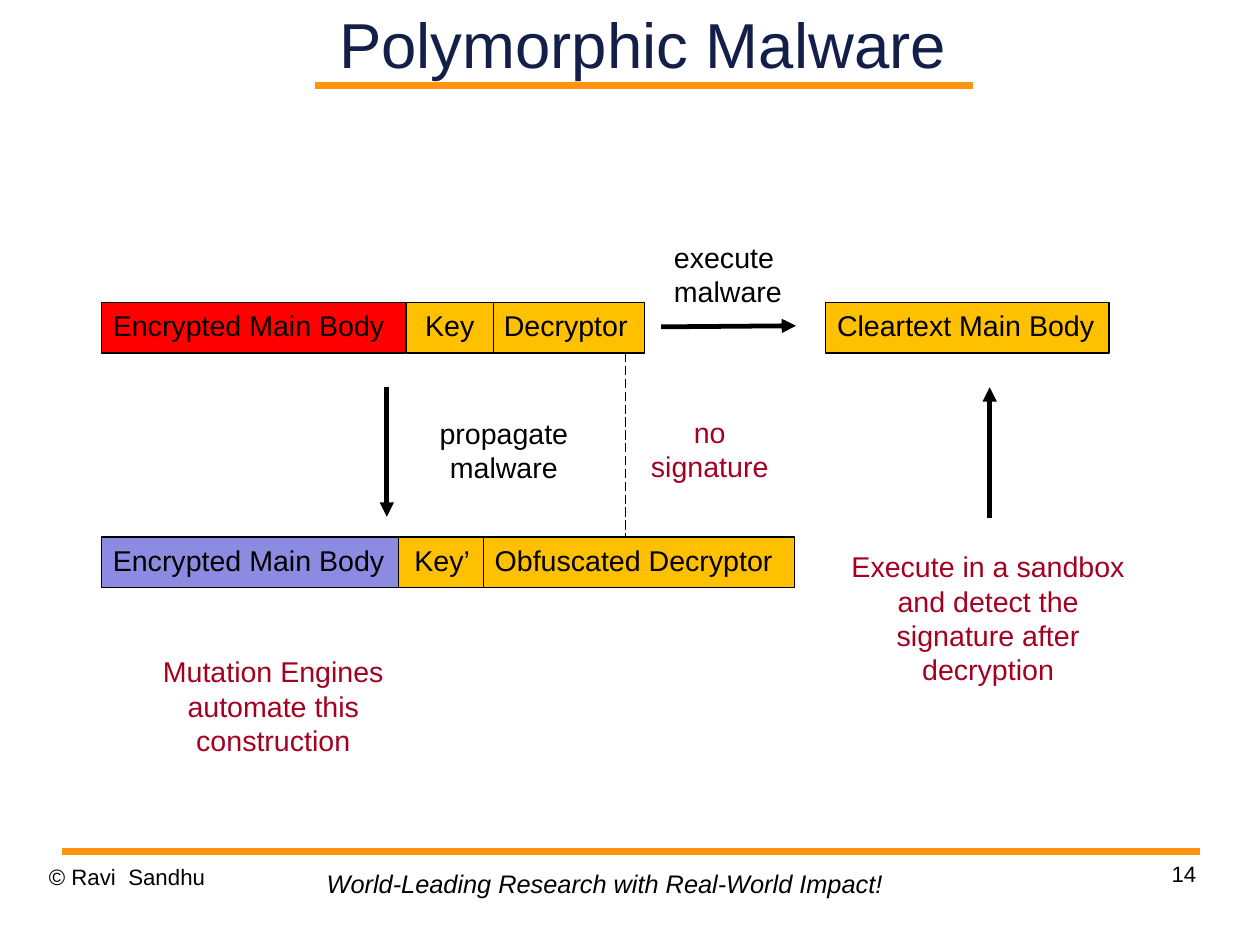
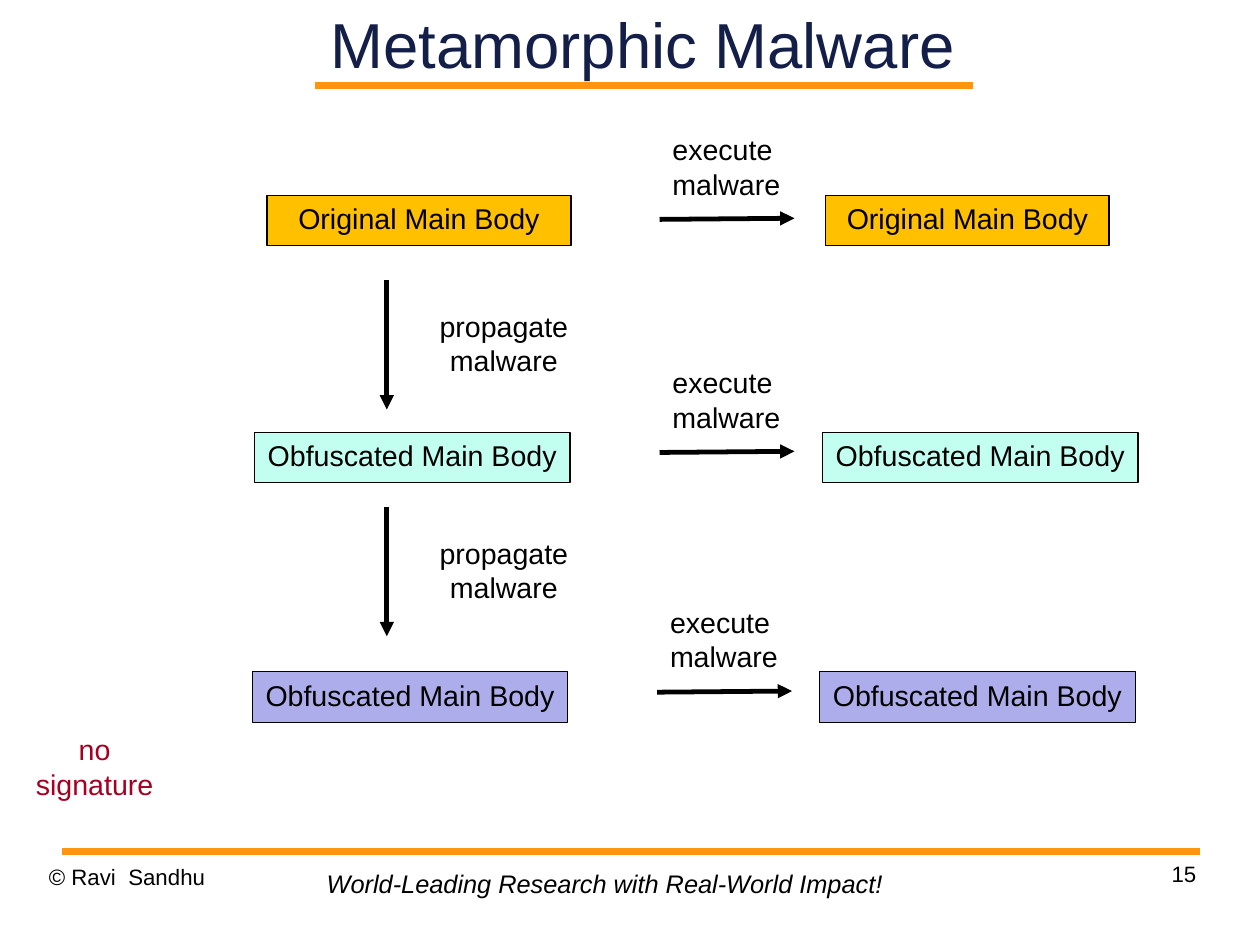
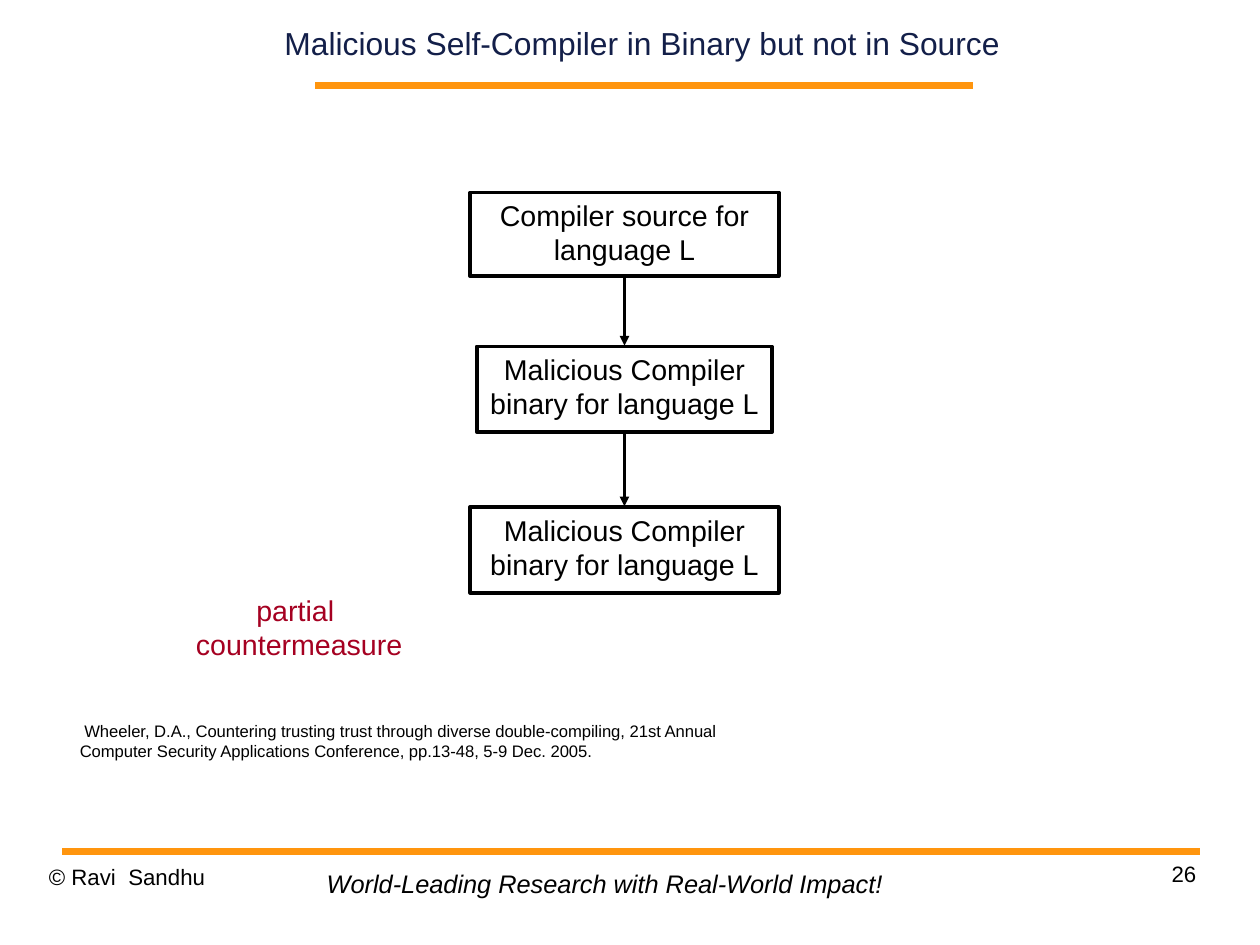
from lxml import etree
from pptx import Presentation
from pptx.dml.color import RGBColor
from pptx.enum.dml import MSO_LINE
from pptx.enum.shapes import MSO_CONNECTOR, MSO_SHAPE
from pptx.enum.text import MSO_ANCHOR, MSO_AUTO_SIZE, PP_ALIGN
from pptx.oxml.ns import qn
from pptx.util import Pt

# Shared look
SLIDE_WIDTH, SLIDE_HEIGHT = 793.75, 595.25
FONT = "Arial"
BLACK, NAVY, ORANGE, CRIMSON = "000000", "131F49", "FF950E", "A50021"
RED, AMBER, MINT, VIOLET, LILAC = "FF0000", "FFC000", "C2FFF0", "8B8BE2", "ADADEB"
BODY_SIZE = 18
BAR_HEIGHT = 31.7
LEFT, CENTER, RIGHT = PP_ALIGN.LEFT, PP_ALIGN.CENTER, PP_ALIGN.RIGHT


def rgb(hex_colour):
    return RGBColor.from_string(hex_colour)


# Element builders
def write(frame, text, size=BODY_SIZE, colour=BLACK, align=CENTER,
          italic=False, anchor=MSO_ANCHOR.TOP, wrap=True, inset=None):
    frame.text = text
    frame.auto_size = MSO_AUTO_SIZE.NONE
    frame.word_wrap = wrap
    frame.vertical_anchor = anchor
    if inset is not None:
        frame.margin_left = frame.margin_right = Pt(inset)
        frame.margin_top = frame.margin_bottom = Pt(inset)
    for paragraph in frame.paragraphs:
        paragraph.alignment = align
        for run in paragraph.runs:
            run.font.name = FONT
            run.font.size = Pt(size)
            run.font.italic = italic
            run.font.color.rgb = rgb(colour)


def add_label(slide, text, left, top, width, height, **style):
    label = slide.shapes.add_textbox(Pt(left), Pt(top), Pt(width), Pt(height))
    write(label.text_frame, text, **style)


def add_box(slide, text, left, top, width, height=BAR_HEIGHT, fill=None,
            line_width=0.75, align=CENTER):
    box = slide.shapes.add_shape(MSO_SHAPE.RECTANGLE, Pt(left), Pt(top),
                                 Pt(width), Pt(height))
    box.shadow.inherit = False
    if fill:
        box.fill.solid()
        box.fill.fore_color.rgb = rgb(fill)
    else:
        box.fill.background()
    box.line.color.rgb = rgb(BLACK)
    box.line.width = Pt(line_width)
    write(box.text_frame, text, align=align)


def add_line(slide, x1, y1, x2, y2, width=3, colour=BLACK, dash=None, arrow=False):
    line = slide.shapes.add_connector(MSO_CONNECTOR.STRAIGHT, Pt(x1), Pt(y1),
                                      Pt(x2), Pt(y2))
    line.line.color.rgb = rgb(colour)
    line.line.width = Pt(width)
    if dash:
        line.line.dash_style = dash
    if arrow:
        etree.SubElement(line.line._get_or_add_ln(), qn("a:tailEnd"), type="triangle")
    etree.SubElement(line._element.spPr, qn("a:effectLst"))


def add_execute_step(slide, left, y):
    add_line(slide, left, y, left + 85, y - 0.7, arrow=True)
    add_label(slide, "execute\nmalware", left + 1, y - 58.4, 85, 51, align=LEFT,
              wrap=False)


def add_propagate_step(slide, top):
    add_line(slide, 243.7, top, 243.7, top + 81.5, arrow=True)
    add_label(slide, "propagate\nmalware", 269.2, top + 14.5, 96.5, 51, wrap=False)


def add_no_signature(slide, left, top):
    add_label(slide, "no\nsignature", left, top, 89.3, 51, colour=CRIMSON, wrap=False)


# Title, rules and footer of every slide
def start_slide(deck, title_text, number, title_size=40):
    slide = deck.slides.add_slide(deck.slide_layouts[5])
    title = slide.shapes.title
    title.left, title.top, title.width, title.height = Pt(173.2), Pt(0), Pt(463), Pt(54)
    write(title.text_frame, title_text, size=title_size, colour=NAVY,
          anchor=MSO_ANCHOR.MIDDLE, inset=0)
    for x1, x2, y in ((198.7, 612.7, 54), (39.3, 755.7, 536.2)):
        add_line(slide, x1, y, x2, y, width=4.31, colour=ORANGE)
    add_label(slide, "© Ravi  Sandhu", 30.8, 543.6, 185, 41, size=14, align=LEFT, inset=0)
    add_label(slide, str(number), 568.7, 542.2, 185, 41, size=14, align=RIGHT, inset=0)
    add_label(slide, "World-Leading Research with Real-World Impact!", 198.7, 543.6,
              365.8, 26.6, size=16, align=LEFT, italic=True, wrap=False)
    return slide


# Slides
def build_polymorphic(deck):
    slide = start_slide(deck, "Polymorphic Malware", 14)
    first_top, second_top = 190.7, 338.3
    bars = (
        ("Encrypted Main Body", 64, first_top, 191.5, RED, LEFT),
        ("Decryptor", 310.3, first_top, 95.8, AMBER, LEFT),
        ("Key", 256, first_top, 54.7, AMBER, CENTER),
        ("Cleartext Main Body", 520.2, first_top, 178.5, AMBER, LEFT),
        ("Encrypted Main Body", 64, second_top, 191.5, VIOLET, LEFT),
        ("Key’", 251.2, second_top, 54.7, AMBER, CENTER),
        ("Obfuscated Decryptor", 304.6, second_top, 196, AMBER, LEFT),
    )
    for text, left, top, width, fill, align in bars:
        add_box(slide, text, left, top, width, fill=fill, align=align)
    add_execute_step(slide, 416.5, 205.9)
    add_propagate_step(slide, 244)
    add_line(slide, 394.2, first_top + BAR_HEIGHT, 394.2, second_top,
             width=0.75, dash=MSO_LINE.LONG_DASH)
    add_no_signature(slide, 402.5, 257.8)
    add_line(slide, 623.5, 326, 623.5, 244, arrow=True)
    add_label(slide, "Execute in a sandbox and detect the signature after decryption",
              529.2, 342.5, 186.5, 94, colour=CRIMSON)
    add_label(slide, "Mutation Engines automate this construction",
              78.9, 408.6, 186.5, 73, colour=CRIMSON)


def build_metamorphic(deck):
    slide = start_slide(deck, "Metamorphic Malware", 15)
    # text, fill, top, left of file, left of running body, widths, execute step
    generations = (
        ("Original Main Body", AMBER, 123, 168.2, 520.2, 191.5, 178.5, 415.5, 138.2),
        ("Obfuscated Main Body", MINT, 272.2, 160.3, 518.1, 198.8, 198.8, 415.5, 285),
        ("Obfuscated Main Body", LILAC, 423.2, 158.9, 516.3, 198.8, 198.8, 414, 436),
    )
    for (text, fill, top, file_left, body_left, file_width, body_width,
         step_left, step_y) in generations:
        add_box(slide, text, file_left, top, file_width, fill=fill)
        add_box(slide, text, body_left, top, body_width, fill=fill)
        add_execute_step(slide, step_left, step_y)
    for top in (176.4, 319.3):
        add_propagate_step(slide, top)
    add_no_signature(slide, 15, 457.7)


def build_self_compiler(deck):
    slide = start_slide(deck, "Malicious Self-Compiler in Binary but not in Source", 26,
                        title_size=20)
    axis = 393.4
    malicious = "Malicious Compiler binary for language L"
    stages = (
        ("Compiler source for language L", 121.2, 194.5, 52.7),
        (malicious, 218.2, 186, 54),
        (malicious, 319.4, 194.5, 54),
    )
    for text, top, width, height in stages:
        add_box(slide, text, axis - width / 2, top, width, height, line_width=2.25)
    for (_, top, _, height), (_, next_top, _, _) in zip(stages, stages[1:]):
        add_line(slide, axis, top + height, axis, next_top - 0.5, width=2, arrow=True)
    add_label(slide, " Wheeler, D.A., Countering trusting trust through diverse "
              "double-compiling, 21st Annual Computer Security Applications "
              "Conference, pp.13-48, 5-9 Dec. 2005.",
              43.2, 450.7, 443.5, 32.5, size=10.5, align=LEFT)
    add_label(slide, "partial \ncountermeasure", 113, 370, 151, 51,
              colour=CRIMSON, wrap=False)


def main():
    deck = Presentation()
    deck.slide_width, deck.slide_height = Pt(SLIDE_WIDTH), Pt(SLIDE_HEIGHT)
    build_polymorphic(deck)
    build_metamorphic(deck)
    build_self_compiler(deck)
    deck.save("out.pptx")


if __name__ == "__main__":
    main()
